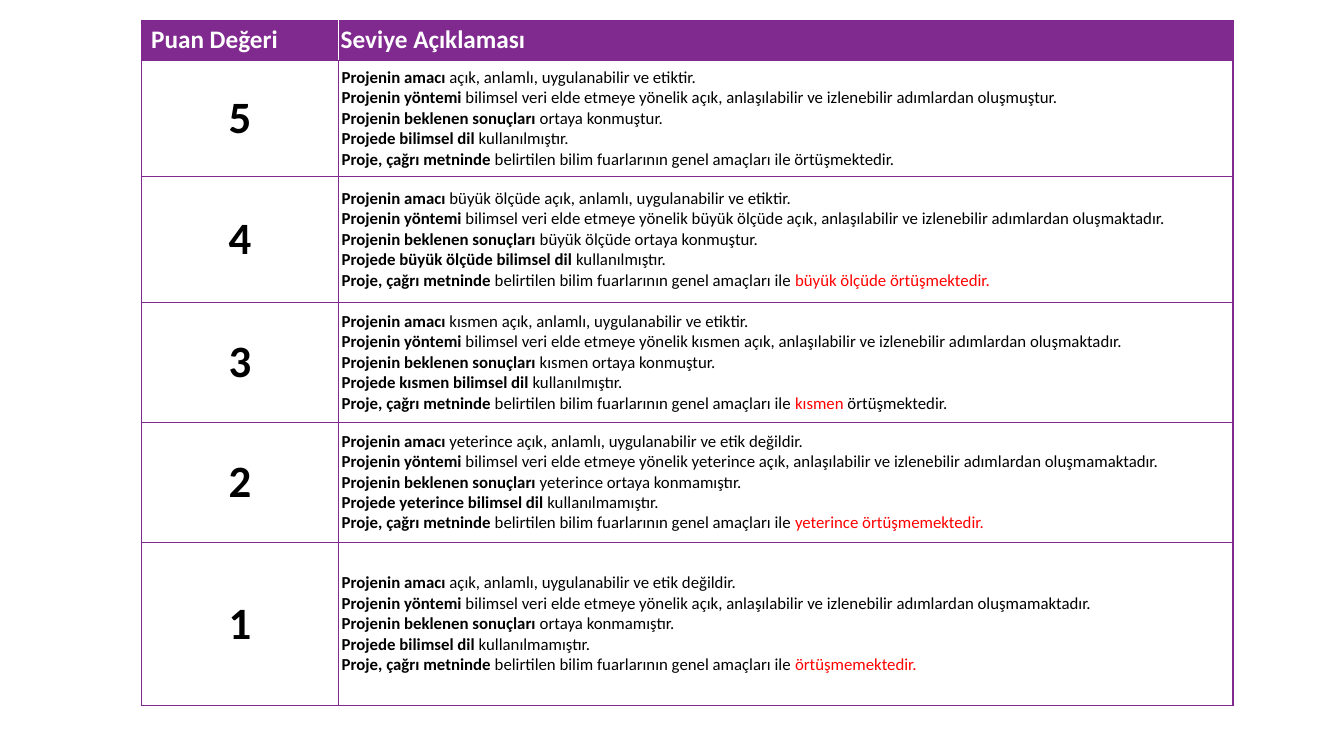
from lxml.etree import SubElement
from pptx import Presentation
from pptx.dml.color import RGBColor
from pptx.enum.text import MSO_ANCHOR, PP_ALIGN
from pptx.oxml.ns import qn
from pptx.util import Inches, Pt

PURPLE = RGBColor(0x80, 0x29, 0x8F)
WHITE = RGBColor(0xFF, 0xFF, 0xFF)
BLACK = RGBColor(0, 0, 0)
RED = RGBColor(0xFF, 0, 0)
FONT = "Calibri"

TABLE_BOX = (1.4, 0.2, 10.83, 6.8)
COLUMN_WIDTHS = (1.96, 8.87)
ROW_HEIGHTS = (0.4, 1.15, 1.25, 1.19, 1.19, 1.62)
HEADINGS = ("Puan Değeri", "Seviye Açıklaması")

# Verb endings: aim, method, results, language
ACHIEVED = ("etiktir", "oluşmaktadır", "konmuştur", "kullanılmıştır")
MISSED = ("etik değildir", "oluşmamaktadır", "konmamıştır", "kullanılmamıştır")

# Score, degree, verb endings, closing words in black or red
LEVELS = (
    ("5", "", ("etiktir", "oluşmuştur", "konmuştur", "kullanılmıştır"),
     [("örtüşmektedir.", BLACK)]),
    ("4", "büyük ölçüde ", ACHIEVED, [("büyük ölçüde örtüşmektedir.", RED)]),
    ("3", "kısmen ", ACHIEVED, [("kısmen", RED), (" örtüşmektedir.", BLACK)]),
    ("2", "yeterince ", MISSED, [("yeterince örtüşmemektedir.", RED)]),
    ("1", "", MISSED, [("örtüşmemektedir.", RED)]),
)


def criteria(degree, endings, closing):
    """Return the five lines of a level as lists of (text, bold, colour)."""
    aim, method, results, language = endings
    pairs = (
        ("Projenin amacı", f" {degree}açık, anlamlı, uygulanabilir ve {aim}."),
        ("Projenin yöntemi",
         f" bilimsel veri elde etmeye yönelik {degree}açık, anlaşılabilir "
         f"ve izlenebilir adımlardan {method}."),
        ("Projenin beklenen sonuçları", f" {degree}ortaya {results}."),
        (f"Projede {degree}bilimsel dil", f" {language}."),
        ("Proje, çağrı metninde",
         " belirtilen bilim fuarlarının genel amaçları ile "),
    )
    lines = [[(lead, True, BLACK), (rest, False, BLACK)] for lead, rest in pairs]
    lines[-1] += [(text, False, colour) for text, colour in closing]
    return lines


def set_borders(cell, **colours):
    properties = cell._tc.get_or_add_tcPr()
    for side in "LRTB":
        line = SubElement(properties, qn(f"a:ln{side}"), w=str(Pt(1)))
        fill = SubElement(line, qn("a:solidFill"))
        SubElement(fill, qn("a:srgbClr"), val=str(colours.get(side, PURPLE)))


def fill_cell(cell, lines, size, align=PP_ALIGN.LEFT, indent=0,
              background=WHITE, **borders):
    cell.margin_left = cell.margin_right = Inches(0.02)
    cell.margin_top = cell.margin_bottom = Inches(0.01)
    cell.vertical_anchor = MSO_ANCHOR.MIDDLE
    set_borders(cell, **borders)
    cell.fill.solid()
    cell.fill.fore_color.rgb = background
    frame = cell.text_frame
    for index, spans in enumerate(lines):
        para = frame.add_paragraph() if index else frame.paragraphs[0]
        para.alignment = align
        para.font.name, para.font.size = FONT, Pt(size)
        para._p.get_or_add_pPr().set("marL", str(Inches(indent)))
        for text, bold, colour in spans:
            span = para.add_run()
            span.text = text
            span.font.bold = bold
            span.font.color.rgb = colour


def add_rubric(page, box):
    frame = page.shapes.add_table(len(ROW_HEIGHTS), len(COLUMN_WIDTHS),
                                  *map(Inches, box))
    table = frame.table
    table.first_row = table.horz_banding = False
    for column, width in zip(table.columns, COLUMN_WIDTHS):
        column.width = Inches(width)
    for row, height in zip(table.rows, ROW_HEIGHTS):
        row.height = Inches(height)

    score_heading, level_heading = [[[(text, True, WHITE)]] for text in HEADINGS]
    fill_cell(table.cell(0, 0), score_heading, 18, indent=0.08,
              background=PURPLE, R=WHITE)
    fill_cell(table.cell(0, 1), level_heading, 18, background=PURPLE, L=WHITE)
    for row, (score, *level) in enumerate(LEVELS, start=1):
        fill_cell(table.cell(row, 0), [[(score, True, BLACK)]], 32, PP_ALIGN.CENTER)
        fill_cell(table.cell(row, 1), criteria(*level), 12, PP_ALIGN.JUSTIFY, 0.01)


def main():
    deck = Presentation()
    deck.slide_width, deck.slide_height = Inches(13.33), Inches(7.5)
    page = deck.slides.add_slide(deck.slide_layouts[6])
    add_rubric(page, TABLE_BOX)
    deck.save("out.pptx")


if __name__ == "__main__":
    main()
